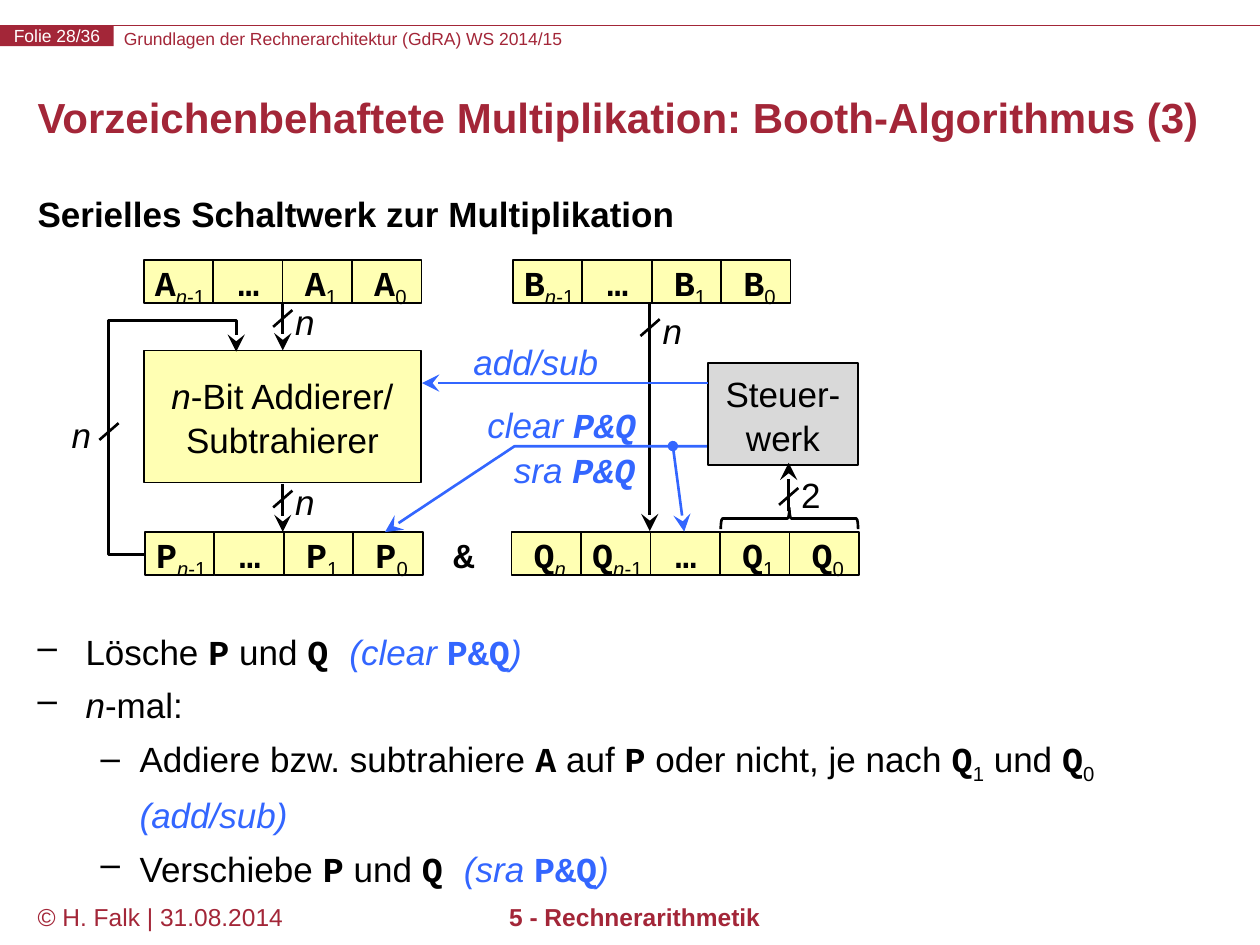
from lxml import etree
from pptx import Presentation
from pptx.dml.color import RGBColor
from pptx.enum import shapes, text
from pptx.oxml import ns
from pptx.util import Pt

RED, BLUE, BLACK, WHITE = "A32638", "3366FF", "000000", "FFFFFF"
YELLOW, GREY = "FFFFB3", "D9D9D9"
CELL_WIDTH, CELL_HEIGHT = 39.7, 24.5


def color(value):
    return RGBColor.from_string(value)


def add_runs(paragraph, runs, size=20, ink=BLACK):
    """Runs are (text, flags): m mono, b bold, i italic, s subscript, c blue."""
    for content, flags in runs:
        run = paragraph.add_run()
        run.text = content
        mono = "m" in flags
        values = {
            "name": "Courier New" if mono else "Arial",
            "size": Pt(size),
            "bold": mono or "b" in flags,
            "italic": "i" in flags,
        }
        for name, value in values.items():
            setattr(run.font, name, value)
        run.font.color.rgb = color(BLUE if "c" in flags else ink)
        if "s" in flags:
            run._r.get_or_add_rPr().set("baseline", "-25000")


def set_frame(shape, **values):
    for name, value in values.items():
        setattr(shape.text_frame, name, value)


def add_text(slide, box, runs, size=20, ink=BLACK, wrap=False, align=None, **frame):
    shape = slide.shapes.add_textbox(*map(Pt, box))
    set_frame(shape, word_wrap=wrap, **frame)
    paragraph = shape.text_frame.paragraphs[0]
    paragraph.alignment = align
    add_runs(paragraph, runs, size, ink)
    return shape


def style_line(shape, ink, width=1.5, head=None, tail=None):
    shape.line.color.rgb = color(ink)
    shape.line.width = Pt(width)
    outline = shape.line._get_or_add_ln()
    for end, kind in (("headEnd", head), ("tailEnd", tail)):
        if kind:
            size = "med" if kind == "oval" else "lg"
            etree.SubElement(outline, ns.qn("a:" + end), type=kind, w=size, len=size)


def add_box(slide, box, fill, lines=(), line=BLACK, size=20, ink=BLACK, spacing=None):
    shape = slide.shapes.add_shape(shapes.MSO_SHAPE.RECTANGLE, *map(Pt, box))
    shape.shadow.inherit = False
    shape.fill.solid()
    shape.fill.fore_color.rgb = color(fill)
    if line:
        style_line(shape, line, 1)
    else:
        shape.line.fill.background()
    set_frame(shape, word_wrap=True, vertical_anchor=text.MSO_ANCHOR.MIDDLE)
    for index, runs in enumerate(lines):
        frame = shape.text_frame
        paragraph = frame.add_paragraph() if index else frame.paragraphs[0]
        paragraph.alignment = text.PP_ALIGN.CENTER
        paragraph.line_spacing = spacing
        add_runs(paragraph, runs, size, ink)
    return shape


def add_line(slide, start, end, ink=BLACK, width=1.5, head=None, tail=None):
    connector = slide.shapes.add_connector(
        shapes.MSO_CONNECTOR.STRAIGHT, *map(Pt, (*start, *end)))
    style_line(connector, ink, width, head, tail)
    etree.SubElement(connector._element.spPr, ns.qn("a:effectLst"))


def add_path(slide, points, ink):
    builder = slide.shapes.build_freeform(*points[0], scale=Pt(1))
    builder.add_line_segments(points[1:], close=False)
    shape = builder.convert_to_shape()
    shape.shadow.inherit = False
    shape.fill.background()
    style_line(shape, ink, tail="stealth")


def add_register(slide, left, top, letter, indices):
    """A row of bit cells; the index None stands for the omitted bits."""
    for column, index in enumerate(indices):
        x = left + column * CELL_WIDTH
        add_box(slide, (x, top, CELL_WIDTH, CELL_HEIGHT), YELLOW)
        if index is None:
            offset, width, runs = 7.2, 26.6, [("…", "m")]
        elif index == "n-1":
            offset, width = -0.7, 46
            runs = [(letter, "m"), ("n", "is"), ("-1", "s")]
        else:
            offset, width = 5.6, 33.8
            runs = [(letter, "m"), (index, "is" if index == "n" else "s")]
        add_text(slide, (x + offset, top - 2.9, width, 31.5), runs)


def add_bus_width(slide, x, y, label, flags="i", dx=0, dy=-14):
    """A slash across a wire with the number of bits beside it."""
    add_line(slide, (x - 5.5, y + 4.8), (x + 5.5, y - 4.8))
    add_text(slide, (x + dx, y + dy, 26, 31.5), [(label, flags)])


def add_list(slide, box, items):
    shape = slide.shapes.add_textbox(*map(Pt, box))
    shape.text_frame.word_wrap = True
    for number, (level, runs) in enumerate(items):
        frame = shape.text_frame
        paragraph = frame.add_paragraph() if number else frame.paragraphs[0]
        values = {"level": level, "line_spacing": 1.2, "space_before": Pt(1.5)}
        for name, value in values.items():
            setattr(paragraph, name, value)
        margin, indent = ((27.4, -27.4), (58.3, -22.3))[level]
        properties = paragraph._p.get_or_add_pPr()
        properties.set("marL", str(Pt(margin)))
        properties.set("indent", str(Pt(indent)))
        etree.SubElement(properties, ns.qn("a:buChar"), char="–")
        add_runs(paragraph, runs)


def add_header_and_footer(slide):
    add_line(slide, (0, 14.4), (720, 14.4), RED, 0.75)
    no_margins = dict.fromkeys(
        ("margin_left", "margin_right", "margin_top", "margin_bottom"), 0)
    add_text(slide, (70.8, 15.8, 475, 12),
             [("Grundlagen der Rechnerarchitektur (GdRA) WS 2014/15", "")],
             10, RED, True, **no_margins)
    badge = add_box(slide, (0, 14.4, 65, 12), RED, [[("Folie 28/36", "")]],
                    None, 10, WHITE)
    set_frame(badge, **no_margins)
    add_text(slide, (14.4, 512, 158, 28), [("© H. Falk | 31.08.2014", "")],
             14, RED, True)
    add_text(slide, (144.7, 512, 436, 28), [("5 - Rechnerarithmetik", "b")],
             14, RED, True, text.PP_ALIGN.CENTER)


def add_circuit(slide):
    # Registers
    operand = ["n-1", None, "1", "0"]
    add_register(slide, 82.1, 148.5, "A", operand)
    add_register(slide, 293, 148.5, "B", operand)
    add_register(slide, 82.8, 304, "P", operand)
    add_register(slide, 292.3, 304, "Q", ["n"] + operand)
    add_text(slide, (252, 301.1, 26.6, 31.5), [("&", "m")])

    # Function units
    add_box(slide, (82.1, 200.2, 158.7, 75.6), YELLOW,
            [[("n", "i"), ("-Bit Addierer/", "")], [("Subtrahierer", "")]],
            spacing=1.05)
    add_box(slide, (404.6, 207.4, 85.7, 58.3), GREY, [[("Steuer-werk", "")]],
            spacing=1.05)

    # Data paths
    for start, end in (((161.6, 173), (161.6, 200.2)),
                       ((161.6, 276.5), (161.6, 304)),
                       ((371.3, 173), (371.3, 303.5)),
                       ((450.7, 292.3), (450.7, 264.5))):
        add_line(slide, start, end, tail="stealth")
    add_path(slide, [(82.8, 316.8), (61.9, 316.8), (62.4, 183),
                     (134.6, 183), (134.6, 200.6)], BLACK)
    brace = slide.shapes.add_shape(
        shapes.MSO_SHAPE.RIGHT_BRACE, Pt(445), Pt(257), Pt(12.2), Pt(78.5))
    brace.rotation = 270
    brace.shadow.inherit = False
    brace.fill.background()
    style_line(brace, BLACK)
    for x, y in ((161.6, 182), (161.6, 285.2), (371.5, 187.2)):
        add_bus_width(slide, x, y, "n")
    add_bus_width(slide, 62.3, 246.6, "n", dx=-28.5)
    add_bus_width(slide, 450.7, 283.7, "2", "", dy=-16.6)

    # Control signals
    add_line(slide, (404.6, 218.9), (241.2, 218.9), BLUE, tail="stealth")
    add_path(slide, [(403.9, 254.9), (293.8, 254.9), (219.6, 303.8)], BLUE)
    add_line(slide, (384.5, 254.9), (391, 303.8), BLUE, head="oval", tail="stealth")
    for box, runs in (
            ((263.5, 190.8, 86.4, 31.5), [("add/sub", "ic")]),
            ((271.4, 226.8, 100, 31.5), [("clear ", "ic"), ("P&Q", "mic")]),
            ((286.6, 252.7, 84.2, 31.5), [("sra ", "ic"), ("P&Q", "mic")])):
        add_text(slide, box, runs)


def main():
    presentation = Presentation()
    presentation.slide_width, presentation.slide_height = Pt(720), Pt(540)
    slide = presentation.slides.add_slide(presentation.slide_layouts[6])
    add_header_and_footer(slide)

    # Title and heading
    title = add_text(slide, (14.4, 43.2, 692, 51.8),
                     [("Vorzeichenbehaftete Multiplikation: Booth-Algorithmus (3)", "b")],
                     24, RED, True, vertical_anchor=text.MSO_ANCHOR.MIDDLE)
    title.text_frame.paragraphs[0].line_spacing = Pt(24)
    heading = add_text(slide, (14.4, 109.4, 692, 30),
                       [("Serielles Schaltwerk zur Multiplikation", "b")], wrap=True)
    heading.text_frame.paragraphs[0].line_spacing = 0.9

    add_circuit(slide)

    # Steps of the algorithm
    add_list(slide, (14.4, 352, 692, 151), [
        (0, [("Lösche ", ""), ("P", "m"), (" und ", ""), ("Q ", "m"),
             ("(clear ", "ic"), ("P&Q", "mc"), (")", "ic")]),
        (0, [("n", "i"), ("-mal:", "")]),
        (1, [("Addiere bzw. subtrahiere ", ""), ("A", "m"), (" auf ", ""), ("P", "m"),
             (" oder nicht, je nach ", ""), ("Q", "m"), ("1", "s"), (" und ", ""),
             ("Q", "m"), ("0 ", "s"), ("(add/sub)", "ic")]),
        (1, [("Verschiebe ", ""), ("P", "m"), (" und ", ""), ("Q ", "m"),
             ("(sra ", "ic"), ("P&Q", "mc"), (")", "ic")]),
    ])
    presentation.save("out.pptx")


if __name__ == "__main__":
    main()
